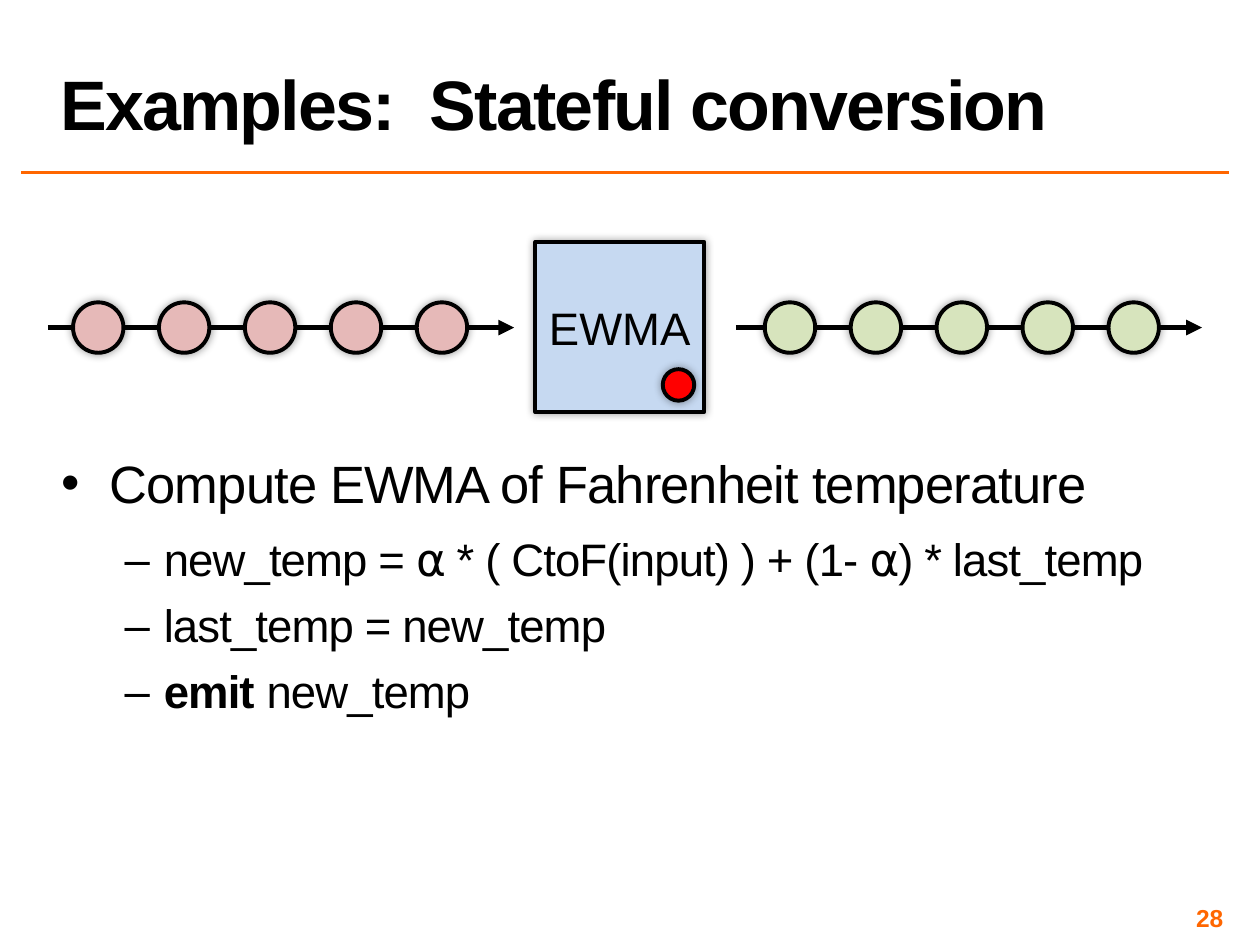
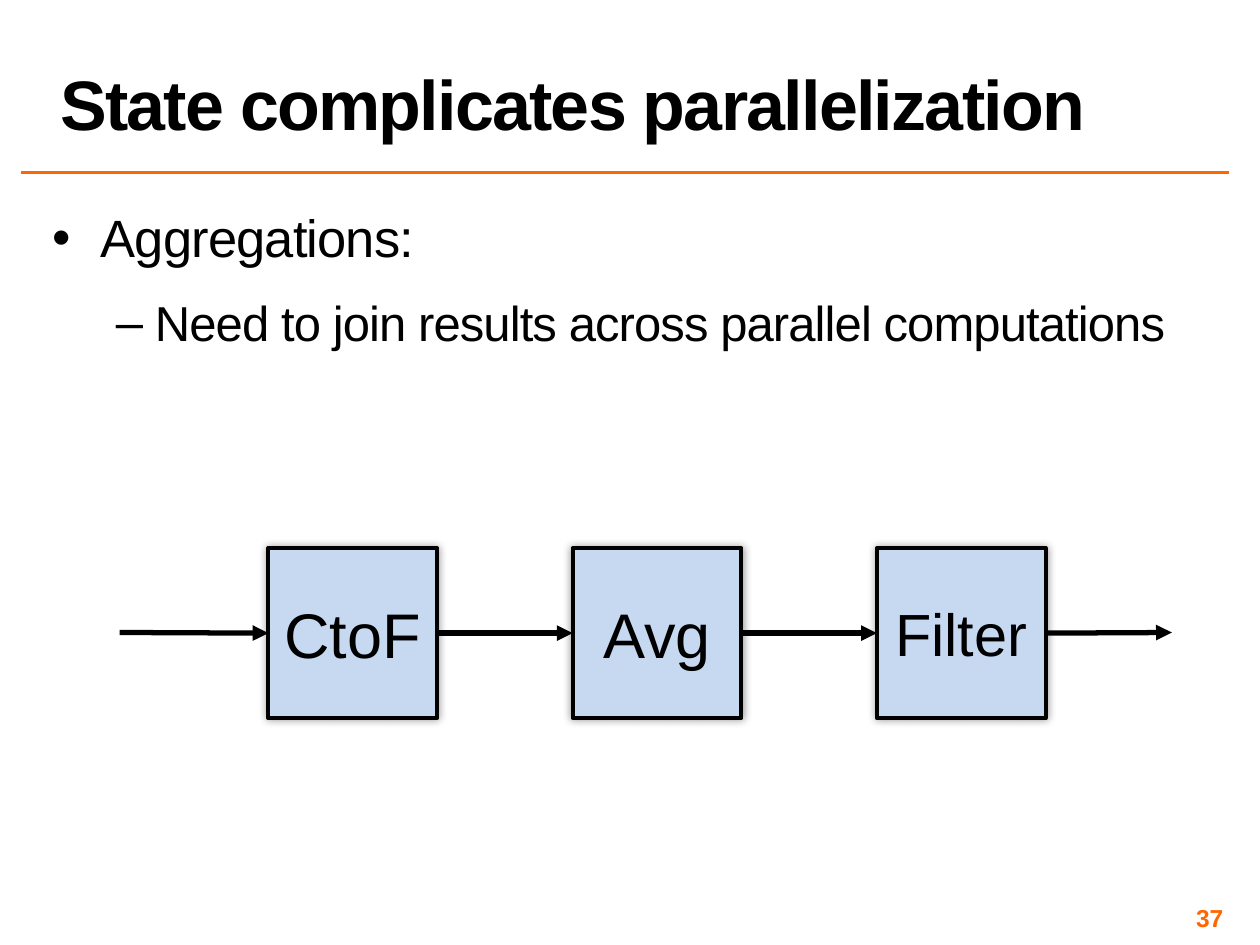
from lxml import etree
from pptx import Presentation
from pptx.dml.color import RGBColor
from pptx.enum.shapes import MSO_CONNECTOR, MSO_SHAPE
from pptx.enum.text import MSO_ANCHOR, PP_ALIGN
from pptx.oxml.ns import qn
from pptx.util import Inches, Pt

STRAIGHT = MSO_CONNECTOR.STRAIGHT
RECT, OVAL = MSO_SHAPE.RECTANGLE, MSO_SHAPE.OVAL
TOP, MIDDLE, BOTTOM = MSO_ANCHOR.TOP, MSO_ANCHOR.MIDDLE, MSO_ANCHOR.BOTTOM
LEFT, CENTER, RIGHT = PP_ALIGN.LEFT, PP_ALIGN.CENTER, PP_ALIGN.RIGHT

FONT = "Arial"
BLACK, ORANGE, BLUE = "000000", "FF6600", "C6D9F1"
PINK, GREEN, RED = "E6B9B8", "D7E4BD", "FF0000"

COLS, ROWS = 100, 75
BOX_W, BOX_H = 13.4, 13.5
DOT, DOT_STEP, DOTS = 4, 6.82, 5
STREAM = 37
BULLETS = [("•", 0.38, -0.38, 1), ("–", 0.81, -0.31, 0.95)]


def cell(count):
    return Inches(count / 10)


def place(*spans):
    return [cell(span) for span in spans]


def color(code):
    return RGBColor.from_string(code)


def child(node, tag, **attrs):
    return etree.SubElement(node, qn(tag), attrs)


def glow(shape):
    shape.shadow.inherit = False
    effects = shape._element.spPr.find(qn("a:effectLst"))
    shade = child(effects, "a:outerShdw", blurRad=str(Pt(5)), dist="0",
                  dir="0", algn="ctr", rotWithShape="0")
    tint = child(shade, "a:srgbClr", val=BLACK)
    child(tint, "a:alpha", val="40000")


def style(run, size, code=BLACK, bold=False, spacing=0):
    run.font.name = FONT
    run.font.size = Pt(size)
    run.font.bold = bold
    run.font.color.rgb = color(code)
    if spacing:
        run.font._element.set("spc", str(round(spacing * 100)))


def frame(slide, spot, anchor, side, edge):
    text = slide.shapes.add_textbox(*place(*spot)).text_frame
    text.word_wrap = True
    text.vertical_anchor = anchor
    text.margin_left = text.margin_right = Inches(side)
    text.margin_top = text.margin_bottom = Inches(edge)
    return text


def label(text, words, align, size, **look):
    text.text = words
    para = text.paragraphs[0]
    para.alignment = align
    style(para.runs[0], size, **look)
    return para


def line(slide, start, end, code=BLACK, width=3, arrow=True):
    link = slide.shapes.add_connector(STRAIGHT, *place(*start, *end))
    link.line.color.rgb = color(code)
    link.line.width = Pt(width)
    if arrow:
        child(link.line._get_or_add_ln(), "a:tailEnd", type="triangle")
    child(link._element.spPr, "a:effectLst")
    return link


def shape(slide, kind, spot, fill):
    item = slide.shapes.add_shape(kind, *place(*spot))
    item.fill.solid()
    item.fill.fore_color.rgb = color(fill)
    item.line.color.rgb = color(BLACK)
    item.line.width = Pt(2.25)
    glow(item)
    return item


def box(slide, left, top, words, size):
    item = shape(slide, RECT, (left, top, BOX_W, BOX_H), BLUE)
    text = item.text_frame
    text.word_wrap = False
    text.vertical_anchor = MIDDLE
    label(text, words, CENTER, size)
    return item


def stream(slide, left, first, top, fill):
    mid = top + DOT / 2
    line(slide, (left, mid), (left + STREAM, mid))
    for step in range(DOTS):
        shape(slide, OVAL, (first + step * DOT_STEP, top, DOT, DOT), fill)


def bullet(para, words, level, size, before, after):
    mark, margin, indent, spacing = BULLETS[level]
    para.level = level
    para.line_spacing = spacing
    para.space_before, para.space_after = Pt(before), Pt(after)
    props = para._p.get_or_add_pPr()
    props.set("marL", str(Inches(margin)))
    props.set("indent", str(Inches(indent)))
    child(props, "a:buFont", typeface=FONT)
    child(props, "a:buChar", char=mark)
    for turn, part in enumerate(words.split("**")):
        if part:
            run = para.add_run()
            run.text = part
            style(run, size, bold=turn % 2 == 1, spacing=-0.5)


def body(slide, spot, items):
    text = frame(slide, spot, TOP, 0.04, 0.04)
    for turn, item in enumerate(items):
        para = text.add_paragraph() if turn else text.paragraphs[0]
        bullet(para, *item)


def page(deck, title, number):
    slide = deck.slides.add_slide(deck.slide_layouts[6])
    line(slide, (1.7, 13.7), (97.5, 13.7), ORANGE, 2, False)
    head = frame(slide, (3.8, 0.2, 93.7, 11.7), BOTTOM, 0.1, 0.05)
    label(head, title, LEFT, 40, bold=True, spacing=-1).line_spacing = 0.8
    foot = frame(slide, (74.2, 71.7, 23.3, 2.3), MIDDLE, 0.04, 0.04)
    label(foot, number, RIGHT, 14, code=ORANGE, bold=True)
    return slide


def convert(deck):
    slide = page(deck, "Examples:  Stateful conversion", "28")
    stream(slide, 3.8, 5.8, 24, PINK)
    stream(slide, 58.4, 60.7, 24, GREEN)
    box(slide, 42.5, 19.2, "EWMA", 26)
    shape(slide, OVAL, (52.6, 29.3, 2.5, 2.5), RED)
    body(slide, (4.5, 35.4, 93.7, 26.2), [
        ("Compute EWMA of Fahrenheit temperature", 0, 30, 20, 8),
        ("new_temp = ⍺ * ( CtoF(input) ) + (1- ⍺) * last_temp", 1, 26, 4, 4),
        ("last_temp = new_temp", 1, 26, 4, 4),
        ("**emit **new_temp", 1, 26, 4, 4),
    ])


def combine(deck):
    slide = page(deck, "State complicates parallelization", "37")
    body(slide, (3.8, 15.9, 93.7, 54.8), [
        ("Aggregations:", 0, 30, 8, 8),
        ("Need to join results across parallel computations", 1, 28, 8, 8),
    ])
    left, step, top, flow = 21.3, 24.15, 43.5, 50.2
    stages = [("CtoF", 36), ("Avg", 36), ("Filter", 34)]
    boxes = [box(slide, left + turn * step, top, *stage)
             for turn, stage in enumerate(stages)]
    for source, target in zip([None] + boxes, boxes + [None]):
        link = line(slide, (9.5, flow), (93, flow))
        if source:
            link.begin_connect(source, 3)
        if target:
            link.end_connect(target, 1)


def main():
    deck = Presentation()
    deck.slide_width, deck.slide_height = place(COLS, ROWS)
    convert(deck)
    combine(deck)
    deck.save("out.pptx")


if __name__ == "__main__":
    main()
